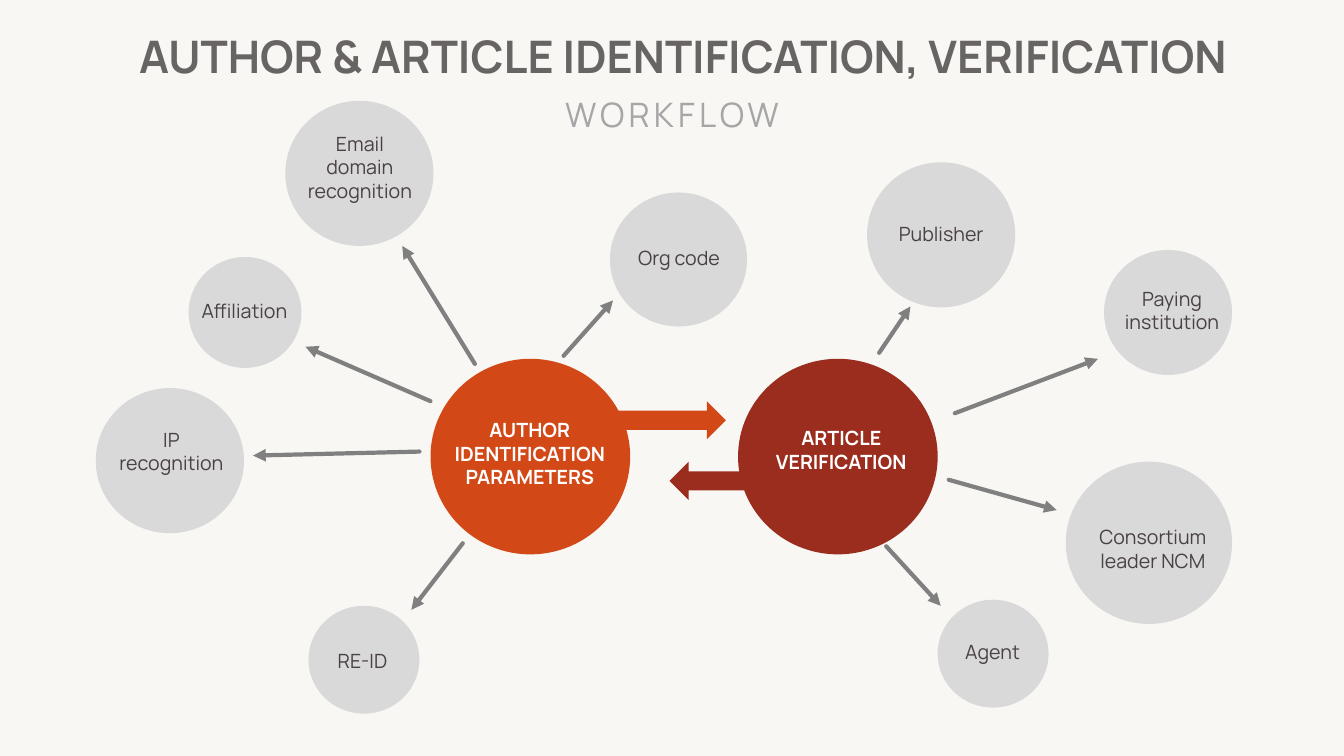
from lxml import etree
from pptx import Presentation
from pptx.dml.color import RGBColor
from pptx.enum.shapes import MSO_CONNECTOR, MSO_SHAPE
from pptx.enum.text import MSO_ANCHOR, MSO_AUTO_SIZE, PP_ALIGN
from pptx.oxml.ns import qn
from pptx.util import Pt

PX = 9144  # EMU per px, 100 px to the inch
OVAL, ARROW = MSO_SHAPE.OVAL, MSO_SHAPE.RIGHT_ARROW
STRAIGHT = MSO_CONNECTOR.STRAIGHT
TOP, MIDDLE = MSO_ANCHOR.TOP, MSO_ANCHOR.MIDDLE
CENTER, NO_FIT = PP_ALIGN.CENTER, MSO_AUTO_SIZE.NONE
THEME = dict(
    font="Manrope", title_size=32, subtitle_size=24, label_size=14, line=3,
    back="F8F7F4", title="696464", subtitle="A6A6A6", label="494142",
    hub_label="FFFFFF", author="D34817", article="9B2D1F",
    bubble="D9D9D9", spoke="808080",
)


def write(sp, text, box, size="label_size", color="label", bold=False,
          anchor=MIDDLE, spacing=0):
    """Place a text shape and fill it, one paragraph for each line of text."""
    sp.left, sp.top, sp.width, sp.height = (v * PX for v in box)
    tf = sp.text_frame
    tf.word_wrap, tf.auto_size, tf.vertical_anchor = True, NO_FIT, anchor
    tf.text = text
    for p in tf.paragraphs:
        p.alignment = CENTER
        r = p.runs[0]
        r.font.name, r.font.size, r.font.bold = THEME["font"], Pt(THEME[size]), bold
        r.font.color.rgb = RGBColor.from_string(THEME[color])
        if spacing:
            r.font._element.set("spc", str(spacing))


def draw(kind, box, color):
    """Add a plain filled shape."""
    sp = s.shapes.add_shape(kind, *(v * PX for v in box))
    sp.shadow.inherit = False
    sp.fill.solid()
    sp.fill.fore_color.rgb = RGBColor.from_string(THEME[color])
    sp.line.fill.background()
    return sp


prs = Presentation()
prs.slide_width, prs.slide_height = 1333 * PX, 750 * PX
s = prs.slides.add_slide(prs.slide_layouts[5])
s.background.fill.solid()
s.background.fill.fore_color.rgb = RGBColor.from_string(THEME["back"])

# Heading
write(s.shapes.title, "AUTHOR & ARTICLE IDENTIFICATION, VERIFICATION",
      (104, 23, 1148, 64), size="title_size", color="title", bold=True, anchor=TOP)
write(s.shapes.add_textbox(0, 0, 0, 0), "WORKFLOW", (546, 88, 241, 50),
      size="subtitle_size", color="subtitle", anchor=TOP, spacing=300)

# Hubs: text, circle, text box, colour
hubs = [
    ("AUTHOR\nIDENTIFICATION\nPARAMETERS", (427, 356, 198, 194),
     (435, 410, 181, 81), "author"),
    ("ARTICLE\nVERIFICATION", (732, 356, 198, 194), (756, 418, 157, 57), "article"),
]
for text, circle, box, color in hubs:
    draw(OVAL, circle, color)
    write(s.shapes.add_textbox(0, 0, 0, 0), text, box,
          color="hub_label", bold=True, anchor=TOP)

# Exchange between the hubs
draw(ARROW, (612, 398, 108, 38), "author")
draw(ARROW, (664, 458, 112, 38), "article").rotation = 180

# Bubbles: text, circle, text box, spoke from hub to bubble
bubbles = [
    ("Email domain recognition", (283, 100, 147, 144), (291, 125, 132, 81),
     (471, 361, 399, 244)),
    ("Affiliation", (187, 255, 112, 110), (183, 291, 119, 34), (427, 398, 303, 344)),
    ("IP recognition", (95, 385, 147, 144), (99, 419, 142, 57), (416, 448, 251, 452)),
    ("RE-ID", (306, 601, 110, 107), (300, 638, 119, 34), (459, 539, 408, 605)),
    ("Org code", (605, 191, 136, 133), (614, 239, 119, 34), (559, 353, 608, 298)),
    ("Publisher", (860, 161, 147, 144), (874, 215, 119, 34), (872, 350, 903, 304)),
    ("Paying institution", (1095, 248, 127, 124), (1103, 279, 119, 57),
     (947, 410, 1089, 356)),
    ("Consortium leader NCM", (1057, 458, 165, 161), (1073, 516, 141, 57),
     (941, 476, 1048, 506)),
    ("Agent", (930, 595, 110, 107), (925, 629, 119, 34), (879, 542, 933, 601)),
]
for text, circle, box, spoke in bubbles:
    draw(OVAL, circle, "bubble")
    write(s.shapes.add_textbox(0, 0, 0, 0), text, box)
    line = s.shapes.add_connector(STRAIGHT, *(v * PX for v in spoke))
    line.line.width = Pt(THEME["line"])
    line.line.color.rgb = RGBColor.from_string(THEME["spoke"])
    ln = line.line._get_or_add_ln()
    ln.set("cap", "rnd")
    etree.SubElement(ln, qn("a:tailEnd"), type="triangle")
    etree.SubElement(line._element.spPr, qn("a:effectLst"))

prs.save("out.pptx")
